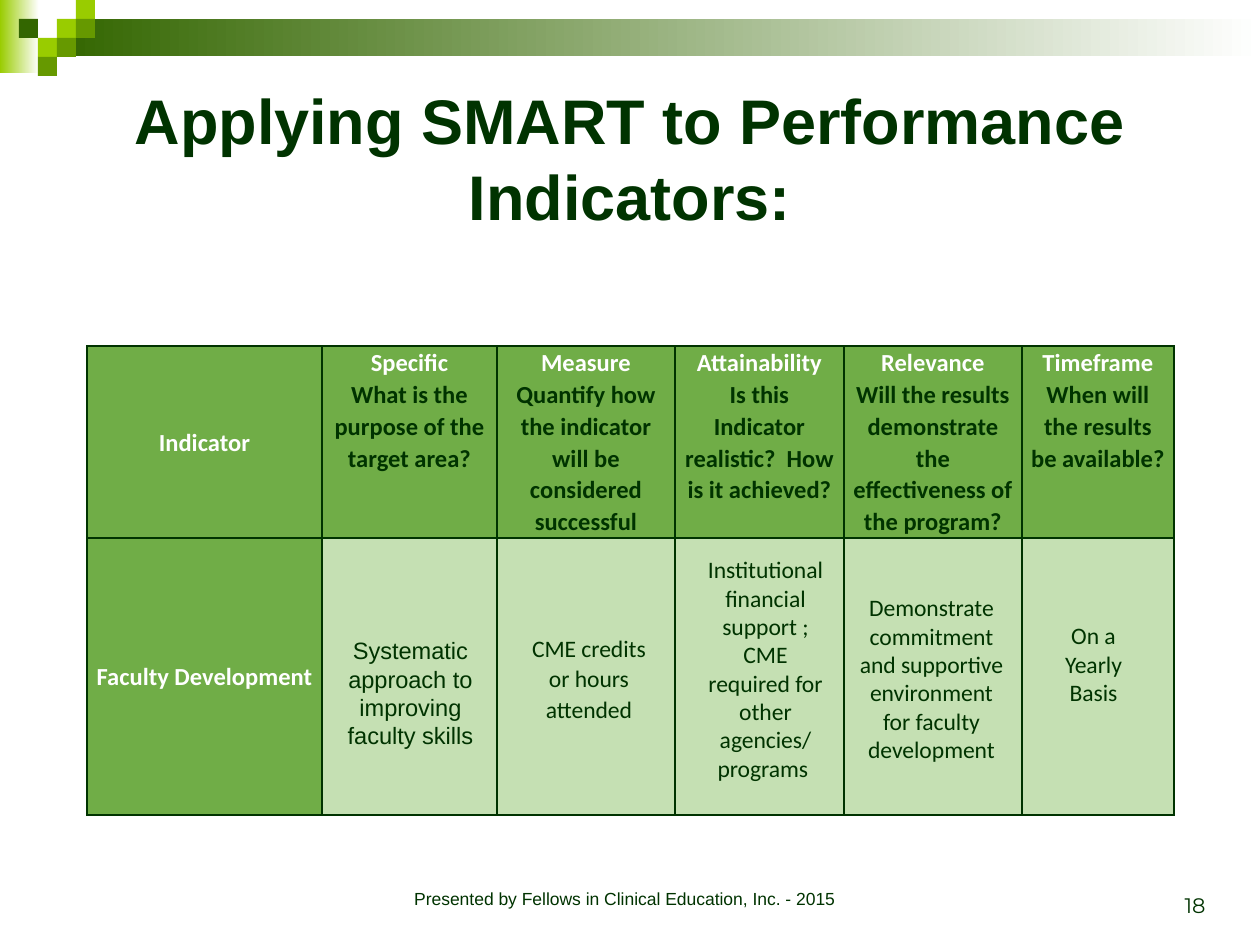
import pptx
import pptx.dml.color
import pptx.enum.shapes
import pptx.enum.text
import pptx.oxml
import pptx.oxml.ns
import pptx.util
from dataclasses import dataclass

ALIGN = pptx.enum.text.PP_ALIGN
ANCHOR = pptx.enum.text.MSO_ANCHOR
AUTO_SIZE = pptx.enum.text.MSO_AUTO_SIZE


@dataclass(frozen=True)
class Theme:
    ink: str = "003300"
    white: str = "FFFFFF"
    lime: str = "99CC00"
    leaf: str = "669900"
    forest: str = "336600"
    header: str = "70AD47"
    body: str = "C5E0B3"
    sans: str = "Arial"
    table_font: str = "Calibri"
    number_font: str = "Montserrat"
    title_size: float = 36
    header_size: float = 14
    detail_size: float = 13.5
    number_size: float = 12
    footer_size: float = 10
    loose: float = 1.07


def px(length):
    return pptx.util.Emu(round(length * 914400 / 126))


def rgb(value):
    return pptx.dml.color.RGBColor.from_string(value)


class SlideBuilder:
    def __init__(self, slide, theme):
        self.slide = slide
        self.theme = theme

    def add_lines(self, frame, lines, font, size, bold=False,
                  align=ALIGN.CENTER, spacing=None):
        """Add one paragraph for each (text, colour) line."""
        for index, (text, color) in enumerate(lines):
            paragraph = frame.paragraphs[0] if index == 0 else frame.add_paragraph()
            paragraph.alignment = align
            if spacing:
                paragraph.line_spacing = spacing
            run = paragraph.add_run()
            run.text = text
            run.font.name = font
            run.font.size = pptx.util.Pt(size)
            run.font.bold = bold
            run.font.color.rgb = rgb(color)

    def title(self, text, left, top, width, height):
        heading = self.slide.shapes.title
        heading.left, heading.top = px(left), px(top)
        heading.width, heading.height = px(width), px(height)
        frame = heading.text_frame
        frame.word_wrap = True
        frame.auto_size = AUTO_SIZE.NONE
        frame.vertical_anchor = ANCHOR.MIDDLE
        self.add_lines(frame, [(text, self.theme.ink)], self.theme.sans,
                       self.theme.title_size, bold=True)

    def block(self, left, top, width, height, color, fade_to=None):
        block = self.slide.shapes.add_shape(
            pptx.enum.shapes.MSO_SHAPE.RECTANGLE,
            px(left), px(top), px(width), px(height))
        block.shadow.inherit = False
        block.line.fill.background()
        if fade_to:
            block.fill.gradient()
            block.fill.gradient_angle = 0
            for stop, shade, position in zip(
                    block.fill.gradient_stops, (color, fade_to), (0, 1)):
                stop.color.rgb = rgb(shade)
                stop.position = position
        else:
            block.fill.solid()
            block.fill.fore_color.rgb = rgb(color)

    def text(self, lines, left, top, width, height, font, size,
             align=ALIGN.CENTER, anchor=ANCHOR.TOP, spacing=None, grow=False):
        box = self.slide.shapes.add_textbox(px(left), px(top), px(width), px(height))
        frame = box.text_frame
        frame.word_wrap = True
        frame.auto_size = AUTO_SIZE.SHAPE_TO_FIT_TEXT if grow else AUTO_SIZE.NONE
        frame.vertical_anchor = anchor
        self.add_lines(frame, [(line, self.theme.ink) for line in lines], font, size,
                       align=align, spacing=spacing)

    def border(self, cell):
        properties = cell._tc.get_or_add_tcPr()
        for index, side in enumerate(("lnL", "lnR", "lnT", "lnB")):
            properties.insert(index, pptx.oxml.parse_xml(
                f'<a:{side} {pptx.oxml.ns.nsdecls("a")} w="12700"><a:solidFill>'
                f'<a:srgbClr val="{self.theme.ink}"/></a:solidFill></a:{side}>'))

    def table(self, left, top, widths, heights, headings, row_label):
        theme = self.theme
        grid = self.slide.shapes.add_table(
            len(heights), len(widths), px(left), px(top),
            px(sum(widths)), px(sum(heights))).table
        for column, width in zip(grid.columns, widths):
            column.width = px(width)
        for row, height in zip(grid.rows, heights):
            row.height = px(height)

        contents = {(0, column): heading for column, heading in enumerate(headings)}
        contents[1, 0] = (row_label,)
        for row in range(len(heights)):
            for column in range(len(widths)):
                cell = grid.cell(row, column)
                cell.margin_left = cell.margin_right = px(8)
                cell.margin_top = cell.margin_bottom = 0
                cell.vertical_anchor = ANCHOR.TOP if column else ANCHOR.MIDDLE
                cell.fill.solid()
                is_heading = (row, column) in contents
                cell.fill.fore_color.rgb = rgb(theme.header if is_heading else theme.body)
                self.border(cell)
                if is_heading:
                    lines = zip(contents[row, column], (theme.white, theme.ink))
                    self.add_lines(cell.text_frame, lines, theme.table_font,
                                   theme.header_size, bold=True, spacing=theme.loose)


def main():
    theme = Theme()
    deck = pptx.Presentation()
    deck.slide_width, deck.slide_height = px(1260), px(945)
    page = SlideBuilder(deck.slides.add_slide(deck.slide_layouts[5]), theme)

    # Banner: two fading bars and a mosaic on a square grid
    page.block(0, 0, 39, 73, theme.lime, fade_to=theme.white)
    page.block(57, 19, 1203, 37, theme.forest, fade_to=theme.white)
    tile = 19
    mosaic = [(3, 1, theme.lime), (4, 0, theme.lime), (4, 1, theme.leaf),
              (2, 2, theme.lime), (1, 1, theme.forest), (3, 2, theme.leaf),
              (2, 3, theme.leaf)]
    for column, row, color in mosaic:
        page.block(column * tile, row * tile, tile, tile, color)

    page.title("Applying SMART to Performance Indicators:", 63, 63, 1134, 189)

    # SMART criteria table
    criteria = [
        ("Indicator",),
        ("Specific", "What is the purpose of the target area?"),
        ("Measure", "Quantify how the indicator will be considered successful"),
        ("Attainability", "Is this Indicator realistic?  How is it achieved?"),
        ("Relevance", "Will the results demonstrate the effectiveness of the program?"),
        ("Timeframe", "When will the results be available?"),
    ]
    page.table(87, 346, [235, 175, 178, 169, 178, 152], [192, 277],
               criteria, "Faculty Development")

    # Faculty development answers, laid over the body row
    answers = [
        (["Systematic approach to improving faculty skills"],
         328, 630, 165, 127, theme.sans, None),
        (["CME credits or hours attended"],
         507, 626, 164, 134, theme.table_font, theme.loose),
        (["Institutional financial support ; CME required for other agencies/",
          "programs "], 690, 549, 151, 271, theme.table_font, None),
        (["Demonstrate commitment and supportive environment for faculty development"],
         842, 587, 179, 184, theme.table_font, None),
        (["On a Yearly Basis"], 1047, 615, 93, 127, theme.table_font, None),
    ]
    for lines, left, top, width, height, font, spacing in answers:
        page.text(lines, left, top, width, height, font, theme.detail_size,
                  spacing=spacing, grow=True)

    # Footer and page number
    page.text(["Presented by Fellows in Clinical Education, Inc. - 2015"],
              346, 882, 557, 42, theme.sans, theme.footer_size)
    page.text(["18"], 924, 861, 294, 63, theme.number_font, theme.number_size,
              align=ALIGN.RIGHT, anchor=ANCHOR.BOTTOM)

    deck.save("out.pptx")


if __name__ == "__main__":
    main()
